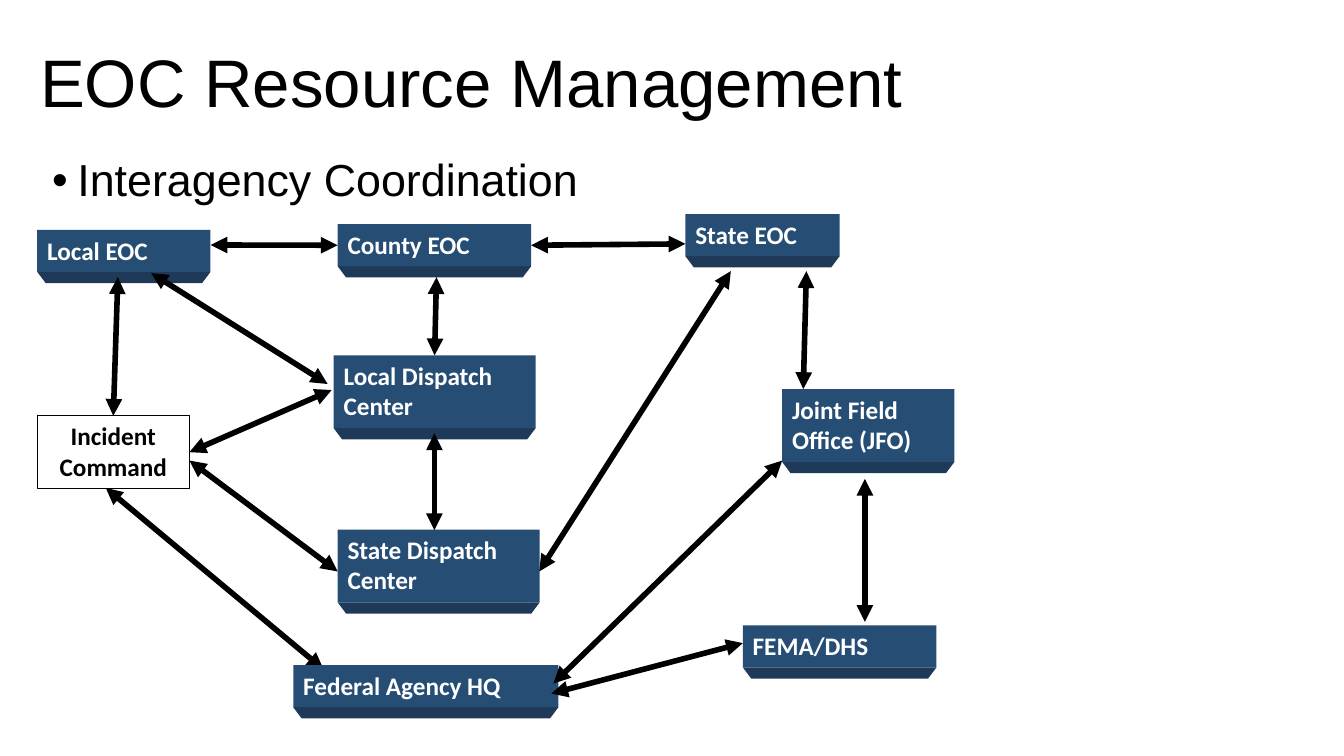
from pptx import Presentation
from pptx.dml.color import RGBColor
from pptx.enum import shapes, text
from pptx.oxml import xmlchemy
from pptx.oxml.ns import qn
from pptx.util import Pt

BLACK = RGBColor(0x00, 0x00, 0x00)
WHITE = RGBColor(0xFF, 0xFF, 0xFF)
FACE = RGBColor(0x26, 0x4E, 0x75)
BEVEL = RGBColor(0x1F, 0x3A, 0x58)

# Content: lengths in points
TITLE = ("EOC Resource Management", 48, (21.6, 23, 922.3, 76.3))
BULLET = ("Interagency Coordination", 32, (30.2, 109.4, 899.3, 401.8))

ONE_LINE, TWO_LINES = 30, 52
# name: (left, top, width, height, lines)
AGENCIES = {
    "local": (26.6, 164.2, 123.8, ONE_LINE, ["Local EOC"]),
    "county": (241.2, 160.2, 138.2, ONE_LINE, ["County EOC"]),
    "state": (489.6, 153, 110.2, ONE_LINE, ["State EOC"]),
    "joint": (558.7, 278, 123, TWO_LINES, ["Joint Field", "Office (JFO)"]),
    "fema": (530.6, 446.7, 138.4, ONE_LINE, ["FEMA/DHS"]),
    "local dispatch": (238.3, 253.8, 144.3, TWO_LINES, ["Local Dispatch Center"]),
    "incident": (26.6, 297, 108.7, TWO_LINES, ["Incident", "Command"]),
}
FRONT_AGENCIES = {
    "state dispatch": (241.2, 378.3, 144.3, TWO_LINES, ["State Dispatch Center"]),
    "federal": (209.5, 475.2, 189.4, ONE_LINE, ["Federal Agency HQ"]),
}

TOP, LEFT, BOTTOM, RIGHT = range(4)
# Each end is a point, or an agency and the side whose middle it meets
BACK_LINKS = [
    (("incident", TOP), (84.2, 198)),
    (("incident", RIGHT), (236.9, 278.6)),
    ((150.5, 175), ("county", LEFT)),
    (("county", RIGHT), (489.6, 174.2)),
    (("local dispatch", TOP), (311.8, 198)),
    ((573.8, 277.9), (576, 193.7)),
    ((617.8, 444.2), (617.8, 342)),
    ((231.1, 478.1), (75.6, 348.5)),
]
FRONT_LINKS = [
    ((310.3, 378.7), (310.3, 309.6)),
    ((241.2, 408.2), (135.4, 329)),
    ((385.2, 408.2), (522, 193.7)),
    ((234, 274.3), (108, 195.1)),
    ((395.3, 488.2), (558.7, 329)),
    ((393.8, 495.4), (530.6, 459.4)),
]

BEVEL_DEPTH, BEVEL_INSET = 8, 6

deck = Presentation()
deck.slide_width, deck.slide_height = Pt(960), Pt(540)
page = deck.slides.add_slide(deck.slide_layouts[6])
boxes = {}


def style(target, **values):
    for name, value in values.items():
        setattr(target, name, value)


def add_heading(words, size, place, anchor):
    box = page.shapes.add_textbox(*map(Pt, place))
    style(box.text_frame, word_wrap=True, vertical_anchor=anchor)
    para = box.text_frame.paragraphs[0]
    para.line_spacing = 0.9
    span = para.add_run()
    span.text = words
    style(span.font, size=Pt(size), name="Arial")
    span.font.color.rgb = BLACK
    return para


def add_bevel(left, top, width):
    """Dark sloping edge below an agency box."""
    right, low = left + width, top + BEVEL_DEPTH
    corners = [(right, top), (right - BEVEL_INSET, low), (left + BEVEL_INSET, low)]
    outline = page.shapes.build_freeform(Pt(left), Pt(top))
    outline.add_line_segments([(Pt(x), Pt(y)) for x, y in corners])
    edge = outline.convert_to_shape()
    edge.shadow.inherit = False
    edge.fill.solid()
    edge.fill.fore_color.rgb = BEVEL
    edge.line.fill.background()


def add_agency(name, left, top, width, height, lines):
    plain = name == "incident"
    if not plain:
        add_bevel(left, top + height, width)
    box = page.shapes.add_shape(
        shapes.MSO_SHAPE.RECTANGLE, *map(Pt, (left, top, width, height)))
    box.shadow.inherit = False
    box.fill.solid()
    box.fill.fore_color.rgb = WHITE if plain else FACE
    if plain:
        box.line.color.rgb = BLACK
        box.line.width = Pt(0.75)
    else:
        box.line.fill.background()
    frame = box.text_frame
    style(frame, word_wrap=True, vertical_anchor=text.MSO_ANCHOR.TOP)
    for index, words in enumerate(lines):
        para = frame.add_paragraph() if index else frame.paragraphs[0]
        para.alignment = text.PP_ALIGN.CENTER if plain else text.PP_ALIGN.LEFT
        span = para.add_run()
        span.text = words
        style(span.font, size=Pt(18), name="Calibri", bold=True)
        span.font.color.rgb = BLACK if plain else WHITE
    boxes[name] = box


def add_link(start, end):
    points = [(0, 0) if isinstance(spot[0], str) else spot for spot in (start, end)]
    link = page.shapes.add_connector(
        shapes.MSO_CONNECTOR.STRAIGHT, *[Pt(v) for point in points for v in point])
    for spot, join in ((start, link.begin_connect), (end, link.end_connect)):
        if isinstance(spot[0], str):
            join(boxes[spot[0]], spot[1])
    link.line.color.rgb = BLACK
    link.line.width = Pt(4)
    stroke = link.line._get_or_add_ln()
    for tag in ("a:headEnd", "a:tailEnd"):
        arrow = stroke.makeelement(qn(tag), {"type": "triangle"})
        stroke.append(arrow)
    properties = link._element.spPr
    properties.append(properties.makeelement(qn("a:effectLst"), {}))


# Title and bullet
add_heading(*TITLE, text.MSO_ANCHOR.MIDDLE)
bullet = add_heading(*BULLET, text.MSO_ANCHOR.TOP)
margins = bullet._p.get_or_add_pPr()
margins.set("marL", str(Pt(18)))
margins.set("indent", str(-Pt(18)))
for tag, key, value in (("a:buFont", "typeface", "Arial"), ("a:buChar", "char", "•")):
    margins.append(margins.makeelement(qn(tag), {key: value}))

# Agencies and the links between them, back to front
for agencies, links in ((AGENCIES, BACK_LINKS), (FRONT_AGENCIES, FRONT_LINKS)):
    for name, details in agencies.items():
        add_agency(name, *details)
    for ends in links:
        add_link(*ends)

deck.save("out.pptx")
